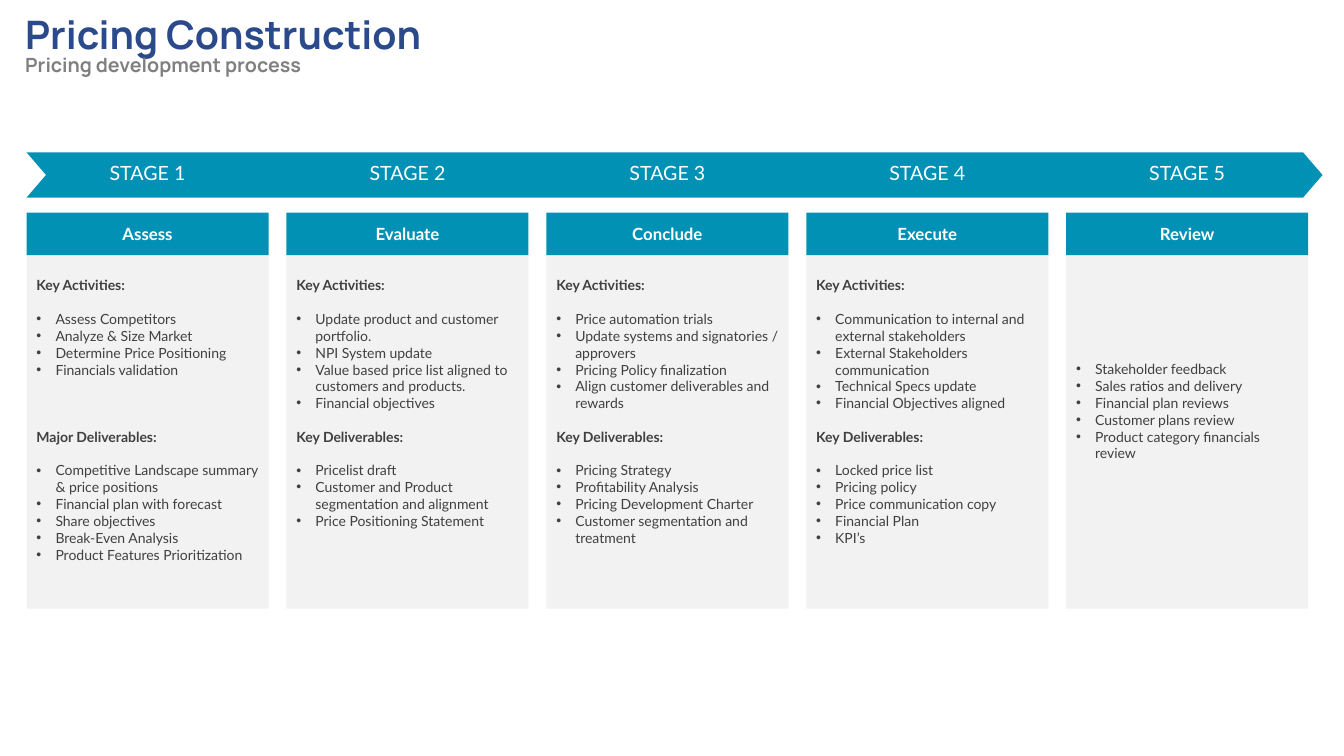
from pptx import Presentation
from pptx.dml.color import RGBColor
from pptx.enum.shapes import MSO_SHAPE
from pptx.enum.text import MSO_ANCHOR, MSO_AUTO_SIZE, PP_ALIGN
from pptx.oxml.ns import qn
from pptx.util import Cm, Pt
from lxml import etree

RECT, ARROW = MSO_SHAPE.RECTANGLE, MSO_SHAPE.CHEVRON
TOP, MIDDLE = MSO_ANCHOR.TOP, MSO_ANCHOR.MIDDLE
LEFT, CENTER = PP_ALIGN.LEFT, PP_ALIGN.CENTER
FIXED = MSO_AUTO_SIZE.NONE

COLORS = {"teal": "0091B5", "card": "F2F2F2", "text": "404040",
          "white": "FFFFFF", "navy": "2A4A8B", "gray": "808080"}

X, STEP, WIDTH = 0.67, 6.55, 6.1
LINE = 12

STAGES = [
    ("Assess", [
        ("Key Activities:", ["Assess Competitors", "Analyze & Size Market",
                             "Determine Price Positioning", "Financials validation"]),
        ("Major Deliverables:", ["Competitive Landscape summary & price positions",
                                 "Financial plan with forecast", "Share objectives",
                                 "Break-Even Analysis", "Product Features Prioritization"])]),
    ("Evaluate", [
        ("Key Activities:", ["Update product and customer portfolio.", "NPI System update",
                             "Value based price list aligned to customers and products.",
                             "Financial objectives"]),
        ("Key Deliverables:", ["Pricelist draft",
                               "Customer and Product segmentation and alignment",
                               "Price Positioning Statement"])]),
    ("Conclude", [
        ("Key Activities:", ["Price automation trials",
                             "Update systems and signatories / approvers",
                             "Pricing Policy finalization",
                             "Align customer deliverables and rewards"]),
        ("Key Deliverables:", ["Pricing Strategy", "Profitability Analysis",
                               "Pricing Development Charter",
                               "Customer segmentation and treatment"])]),
    ("Execute", [
        ("Key Activities:", ["Communication to internal and external stakeholders",
                             "External Stakeholders communication",
                             "Technical Specs update", "Financial Objectives aligned"]),
        ("Key Deliverables:", ["Locked price list", "Pricing policy",
                               "Price communication copy", "Financial Plan", "KPI’s"])]),
    ("Review", [
        ("", ["Stakeholder feedback", "Sales ratios and delivery", "Financial plan reviews",
              "Customer plans review", "Product category financials review"])]),
]


class Deck:
    """Holds the style and the current slide, and draws each kind of element."""

    def __init__(self):
        self.file = Presentation()
        self.file.slide_width, self.file.slide_height = Cm(33.87), Cm(19.05)
        self.slide = self.file.slides.add_slide(self.file.slide_layouts[5])
        self.font = "Lato"

    def words(self, para, text, size, color, bold=False, font=None):
        run = para.add_run()
        run.text = text
        run.font.name = font or self.font
        run.font.size = Pt(size)
        run.font.bold = bold
        run.font.color.rgb = RGBColor.from_string(COLORS[color])

    def title(self, head, sub):
        box = self.slide.shapes.title
        box.left, box.top, box.width, box.height = Cm(0.38), Cm(0.13), Cm(26.75), Cm(2.2)
        frame = box.text_frame
        frame.auto_size, frame.vertical_anchor = FIXED, TOP
        first, second = frame.paragraphs[0], frame.add_paragraph()
        first.alignment = second.alignment = LEFT
        second.line_spacing = 0.8
        self.words(first, head, 28, "navy", True, "Manrope")
        self.words(second, sub, 14, "gray", True, "Manrope")

    def shape(self, kind, x, y, w, h, color):
        item = self.slide.shapes.add_shape(kind, Cm(x), Cm(y), Cm(w), Cm(h))
        item.shadow.inherit = False
        item.fill.solid()
        item.fill.fore_color.rgb = RGBColor.from_string(COLORS[color])
        item.line.fill.background()
        return item

    def band(self, x, y, w, h):
        self.shape(ARROW, x, y, w, h, "teal").adjustments[0] = 0.43

    def label(self, x, y, w, h, text):
        box = self.slide.shapes.add_textbox(Cm(x), Cm(y), Cm(w), Cm(h))
        box.text_frame.word_wrap = True
        para = box.text_frame.paragraphs[0]
        para.alignment = CENTER
        self.words(para, text, 14, "white")

    def header(self, x, y, w, h, text):
        frame = self.shape(RECT, x, y, w, h, "teal").text_frame
        frame.vertical_anchor = MIDDLE
        para = frame.paragraphs[0]
        para.alignment = CENTER
        self.words(para, text, 12, "white", True)

    def bullet(self, para):
        props = para._p.get_or_add_pPr()
        props.set("marL", str(Cm(0.48)))
        props.set("indent", str(-Cm(0.48)))
        etree.SubElement(props, qn("a:buFont")).set("typeface", "Arial")
        etree.SubElement(props, qn("a:buChar")).set("char", "•")

    def card(self, x, y, w, h, groups, inset, gap):
        frame = self.shape(RECT, x, y, w, h, "card").text_frame
        frame.word_wrap, frame.vertical_anchor = True, TOP
        frame.margin_top = Cm(inset)
        frame.margin_right = Cm(0.2)
        para = frame.paragraphs[0]
        for place, (head, items) in enumerate(groups):
            if head:
                if place:
                    para = frame.add_paragraph()
                    para.space_before = Pt(gap)
                para.alignment = LEFT
                para.space_after = Pt(LINE)
                self.words(para, head, 10, "text", True)
            for order, item in enumerate(items):
                if head or order:
                    para = frame.add_paragraph()
                para.alignment = LEFT
                self.bullet(para)
                self.words(para, item, 10, "text")


def main():
    deck = Deck()
    deck.title("Pricing Construction", "Pricing development process")
    deck.band(X, 3.84, 32.66, 1.14)
    for index, (name, groups) in enumerate(STAGES):
        x = X + index * STEP
        deck.card(x, 6.43, WIDTH, 8.91, groups,
                  inset=0.55 if groups[0][0] else 2.66,
                  gap=LINE * (3 if index == 0 else 1))
        deck.header(x, 5.36, WIDTH, 1.07, name)
        deck.label(x, 3.94, WIDTH, 0.86, f"STAGE {index + 1}")
    deck.file.save("out.pptx")


if __name__ == "__main__":
    main()
